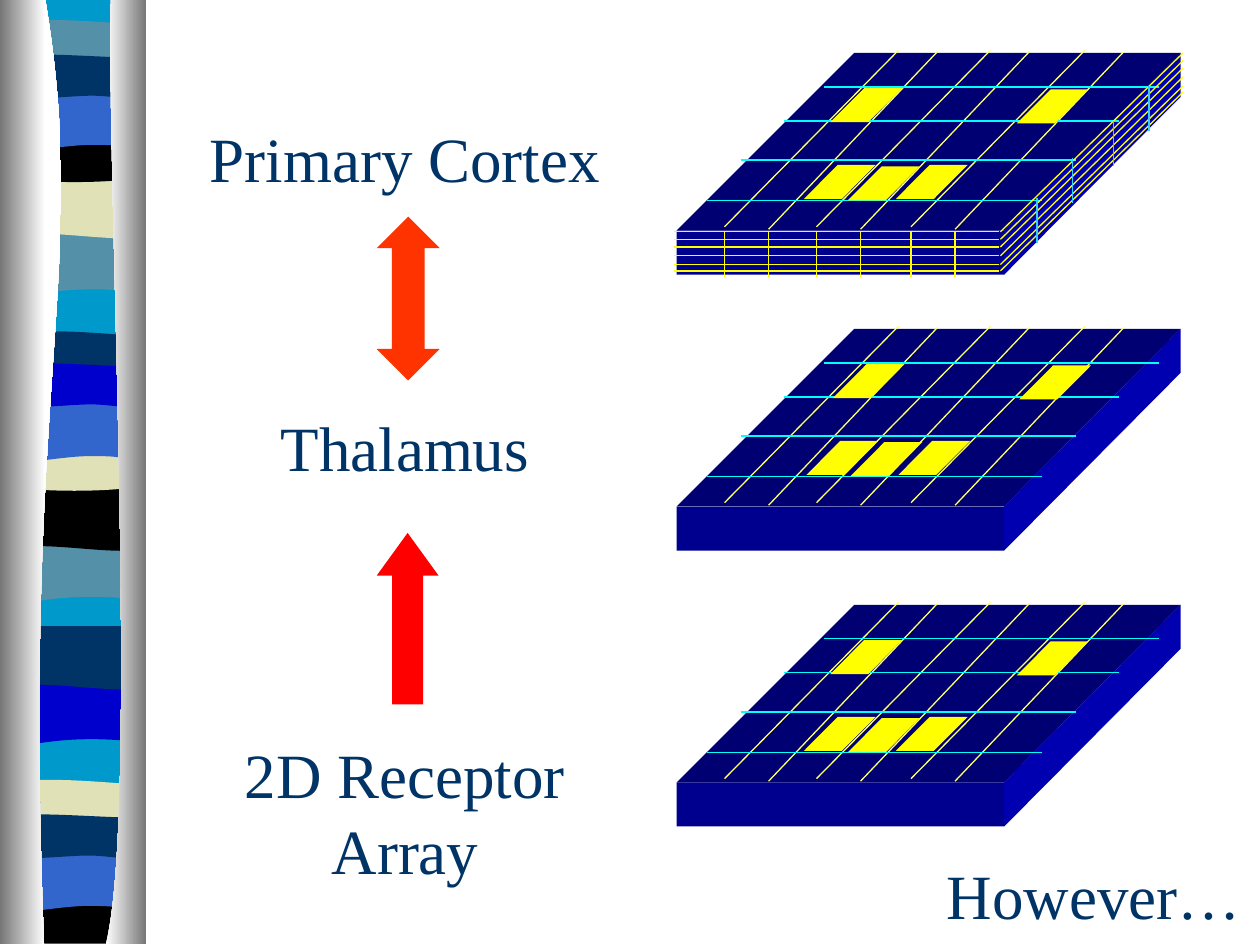
from typing import NamedTuple

from lxml.etree import SubElement
from pptx import Presentation
from pptx.dml.color import RGBColor
from pptx.enum.shapes import MSO_CONNECTOR as Link, MSO_SHAPE as Kind
from pptx.enum.text import MSO_AUTO_SIZE as Fit, PP_ALIGN as Align
from pptx.oxml.ns import qn
from pptx.util import Inches, Pt

SKY = RGBColor(0x00, 0x99, 0xCC)
TEAL = RGBColor(0x54, 0x90, 0xA8)
SAND = RGBColor(0xE1, 0xE1, 0xB7)
BLACK = RGBColor(0x00, 0x00, 0x00)
BLUE = RGBColor(0x33, 0x66, 0xCC)
NAVY = RGBColor(0x00, 0x33, 0x66)
ROYAL = RGBColor(0x00, 0x00, 0xCC)
WHITE = RGBColor(0xFF, 0xFF, 0xFF)
GRAY = RGBColor(0x76, 0x76, 0x76)
TOP = RGBColor(0x00, 0x00, 0x73)
FRONT = RGBColor(0x00, 0x00, 0x8F)
SIDE = RGBColor(0x00, 0x00, 0xB0)
YELLOW = RGBColor(0xFF, 0xFF, 0x00)
LEMON = RGBColor(0xFF, 0xFF, 0x66)
CYAN = RGBColor(0x00, 0xFF, 0xFF)
AQUA = RGBColor(0x33, 0xCC, 0xFF)
ORANGE = RGBColor(0xFF, 0x33, 0x00)
RED = RGBColor(0xFF, 0x00, 0x00)

# Outlines: a pair is a corner, six numbers are a Bezier curve
WAVE = [(1.08, 0), (1.08, .47), (.34, .39, .19, .55, 0, .47), (0, 0)]
SWELL = [(1.08, 0), (1.08, .48), (.9, .55, .34, .42, 0, .48), (0, 0)]
LENS = [(1.08, .05), (1.08, .29), (.9, .33, .18, .33, 0, .29), (0, .05),
        (.07, 0, .24, .01, .42, .01), (.6, .01, .95, .04, 1.08, .05)]
CUP = [(1.08, 0), (1.08, .32), (.9, .38, .18, .38, 0, .32), (0, 0),
       (.67, .05, .86, 0, 1.08, 0)]
ARCH = [(1.08, 0), (1.08, .48), (.91, .42, .84, .42, .66, .42),
        (.48, .42, .16, .48, 0, .48), (0, 0)]
HILL = [(1.08, .06), (1.08, .36), (1.01, .41, .85, .36, .67, .36),
        (.49, .36, .11, .41, 0, .36), (0, .06), (.15, 0, .74, .06, 1.08, .06)]
FOOT = [(1.08, 0), (1.08, .37), (0, .37), (0, 0), (.66, .05, .85, 0, 1.08, 0)]
BASE = [(0, 0), (1.08, 0), (1.08, 7.47), (0, 7.47)]
LEFT = [(0, 0), (.36, 0), (.72, 2.16, .17, 2.96, .35, 7.49), (0, 7.49)]
RIGHT = [(.88, 0), (.84, 1.25, 1.11, 6.46, .84, 7.49), (1.16, 7.49), (1.16, 0)]


class Band(NamedTuple):
    form: list
    left: float
    top: float
    color: RGBColor


class Label(NamedTuple):
    text: str
    left: float
    top: float
    width: float
    height: float


BANDS = [
    Band(BASE, .06, 0, SKY),
    Band(WAVE, .05, 1.85, TEAL), Band(SWELL, .06, 1.39, SAND),
    Band(LENS, .06, .15, TEAL), Band(CUP, .05, 1.08, BLACK),
    Band(ARCH, .06, .73, BLUE), Band(HILL, .06, .4, NAVY),
    Band(WAVE, .04, 4.29, TEAL), Band(SWELL, .05, 3.87, BLACK),
    Band(LENS, .05, 2.62, NAVY), Band(CUP, .05, 3.53, SAND),
    Band(ARCH, .05, 3.2, BLUE), Band(HILL, .05, 2.85, ROYAL),
    Band(WAVE, .04, 5.42, ROYAL), Band(SWELL, .05, 4.97, NAVY),
    Band(LENS, .04, 6.18, SAND), Band(FOOT, .04, 7.12, BLACK),
    Band(ARCH, .03, 6.77, BLUE), Band(HILL, .03, 6.43, NAVY),
]
LABELS = [
    Label("2D Receptor\nArray", 1.83, 5.79, 2.77, 1.31),
    Label("Thalamus", 2.13, 3.19, 2.17, .7),
    Label("Primary Cortex", 1.55, .9, 3.33, .71),
    Label("However…", 7.4, 6.75, 2.56, .71),
]
STEP = 2.19  # from one slab to the next
ROWS = [(6.54, .69), (6.22, .96), (5.88, 1.27), (5.61, 1.59)]
COLS = [5.75, 6.1, 6.48, 6.83, 7.23, 7.58]
TILES = [(6.59, .7), (8.07, .71), (6.38, 1.31), (6.73, 1.32), (7.11, 1.31)]

deck = Presentation()
deck.slide_width, deck.slide_height = Inches(10), Inches(7.5)
shapes = deck.slides.add_slide(deck.slide_layouts[6]).shapes


def paint(shape, color: RGBColor) -> None:
    shape.shadow.inherit = False
    shape.fill.solid()
    shape.fill.fore_color.rgb = color
    shape.line.fill.background()


def outline(form: list, color: RGBColor, left: float = 0, top: float = 0):
    ends = [(Inches(left + p[-2]), Inches(top + p[-1])) for p in form]
    pen = shapes.build_freeform(*ends[0])
    pen.add_line_segments(ends[1:], close=True)
    shape = pen.convert_to_shape()
    paint(shape, color)
    # Bend the segments that are curves
    for node, part in zip(list(shape._element.iter(qn("a:lnTo"))), form[1:]):
        if len(part) == 6:
            node.clear()
            node.tag = qn("a:cubicBezTo")
            for x, y in zip(part[::2], part[1::2]):
                SubElement(node, qn("a:pt"), x=str(Inches(left + x) - shape.left),
                           y=str(Inches(top + y) - shape.top))
    return shape


def rail(form: list, start: RGBColor, end: RGBColor) -> None:
    fill = outline(form, start).fill
    fill.gradient()
    fill.gradient_angle = 0
    for stop, color in zip(fill.gradient_stops, (start, end)):
        stop.color.rgb = color


def block(kind: Kind, box: tuple, color: RGBColor, *adjust: float) -> None:
    shape = shapes.add_shape(kind, *map(Inches, box))
    for i, value in enumerate(adjust):
        shape.adjustments[i] = value
    paint(shape, color)


def rule(x1: float, y1: float, x2: float, y2: float, color: RGBColor) -> None:
    line = shapes.add_connector(Link.STRAIGHT, *map(Inches, (x1, y1, x2, y2)))
    line.line.color.rgb = color
    line.line.width = Pt(.75)
    SubElement(line._element.spPr, qn("a:effectLst"))


def slab(top: float) -> None:
    outline([(5.37, 1.83), (6.78, .42), (9.37, .42), (7.97, 1.83)], TOP, 0, top)
    outline([(7.97, 1.83), (9.37, .42), (9.37, .77), (7.97, 2.18)], SIDE, 0, top)
    block(Kind.RECTANGLE, (5.37, top + 1.83, 2.6, .35), FRONT)
    for i, x in enumerate(COLS):
        odd = i % 2
        rule(x, top + 1.8 + .02 * odd, x + 1.38 - .04 * odd, top + .4 + .01 * odd, LEMON)
    for x, y in ROWS:
        rule(x, top + y, x + 2.66, top + y, CYAN)


def label(item: Label) -> None:
    frame = shapes.add_textbox(*map(Inches, item[1:])).text_frame
    frame.word_wrap = False
    frame.auto_size = Fit.SHAPE_TO_FIT_TEXT
    frame.text = item.text
    for para in frame.paragraphs:
        para.alignment = Align.CENTER
        para.font.name = "Times New Roman"
        para.font.size = Pt(36)
        para.font.color.rgb = NAVY


# Side ornament
for band in BANDS:
    outline(band.form, band.color, band.left, band.top)
rail(LEFT, GRAY, WHITE)
rail(RIGHT, WHITE, GRAY)

# Slabs with their grids
for n in range(3):
    slab(n * STEP)

# Layers of the cortex
for y in (1.84, 1.9, 1.96, 2.03, 2.1, 2.15):
    rule(5.35, y, 7.93, y, YELLOW)
    rule(7.94, y, 9.39, y - 1.42, YELLOW)
for x in COLS:
    rule(x, 1.83, x, 2.2, YELLOW)
for x, y in [(8.23, 1.57), (8.51, 1.25), (8.84, .96), (9.12, .68)]:
    rule(x, y, x, y + .36, AQUA)

# Active cells
for n, shift in enumerate((0, .02, 0)):
    for x, y in TILES:
        block(Kind.PARALLELOGRAM, (x + shift, y + n * STEP, .57, .27), YELLOW, .995)

# Arrows and labels
block(Kind.UP_DOWN_ARROW, (2.99, 1.72, .5, 1.3), ORANGE, .5, .52)
block(Kind.UP_ARROW, (2.99, 4.23, .49, 1.36), RED, .5, .69)
for item in LABELS:
    label(item)

deck.save("out.pptx")
